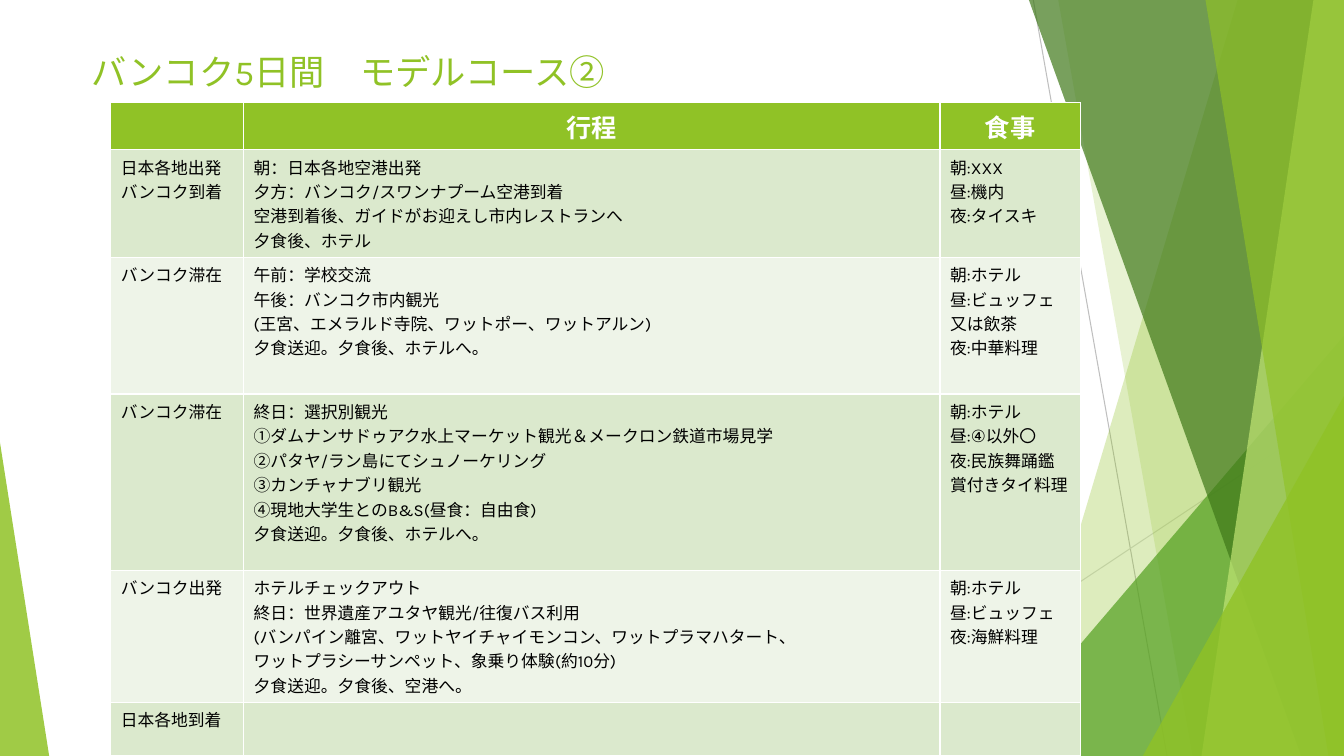
from lxml import etree
from pptx import Presentation
from pptx import util as u
from pptx.dml.color import RGBColor
from pptx.enum import shapes, text
from pptx.oxml import ns

FONT = "Karla"
GREEN = RGBColor(0x90, 0xC2, 0x26)
MID_GREEN = RGBColor(0x54, 0xA0, 0x21)
DARK_GREEN = RGBColor(0x3F, 0x78, 0x19)
LIGHT_GREEN = RGBColor(0xC0, 0xE4, 0x74)
BAND_DARK = RGBColor(0xDB, 0xE9, 0xCD)
BAND_LIGHT = RGBColor(0xEE, 0xF4, 0xE8)
GREY = RGBColor(0xBF, 0xBF, 0xBF)
PALE_GREY = RGBColor(0xD9, 0xD9, 0xD9)
WHITE = RGBColor(0xFF, 0xFF, 0xFF)
BLACK = RGBColor(0x00, 0x00, 0x00)
WIDTH, HEIGHT = 33.87, 19.05


def paint(shape, color, opacity):
    shape.shadow.inherit = False
    shape.line.fill.background()
    shape.fill.solid()
    shape.fill.fore_color.rgb = color
    color_element = shape.fill._xPr.find(".//" + ns.qn("a:srgbClr"))
    etree.SubElement(color_element, ns.qn("a:alpha"), val=str(opacity * 1000))


def style_runs(paragraph, size, color, bold=False):
    for run in paragraph.runs:
        run.font.name = FONT
        run.font.size = u.Pt(size)
        run.font.color.rgb = color
        run.font.bold = bold


presentation = Presentation()
presentation.slide_width = u.Cm(WIDTH)
presentation.slide_height = u.Cm(HEIGHT)
slide = presentation.slides.add_slide(presentation.slide_layouts[6])

# Thin background lines
for x1, y1, x2, y2, color in [
    (26.04, 0, 29.41, HEIGHT, GREY),
    (WIDTH, 10.24, 20.62, HEIGHT, PALE_GREY),
]:
    line = slide.shapes.add_connector(
        shapes.MSO_CONNECTOR.STRAIGHT, u.Cm(x1), u.Cm(y1), u.Cm(x2), u.Cm(y2))
    line.line.color.rgb = color
    line.line.width = u.Pt(0.75)
    etree.SubElement(line._element.spPr, ns.qn("a:effectLst"))

# Facets, back to front: bands by (top x, bottom x) of the left edge,
# triangles by (left, top, width, apex position)
facets = [
    ("band", (31.19, 25.5), GREEN, 30),
    ("band", (26.67, 30.05), GREEN, 20),
    ("triangle", (24.82, 8.46, 9.05, 1), MID_GREEN, 72),
    ("band", (25.93, 32.79), DARK_GREEN, 70),
    ("band", (33.1, 30.28), LIGHT_GREEN, 70),
    ("band", (30.38, 33.48), GREEN, 65),
    ("triangle", (28.8, 9.98, 5.07, 1), GREEN, 80),
    ("triangle", (0, 11.15, 1.24, 0), GREEN, 85),
]
for kind, geometry, color, opacity in facets:
    if kind == "band":
        top_x, bottom_x = geometry
        builder = slide.shapes.build_freeform(u.Cm(top_x), 0)
        corners = [(WIDTH, 0), (WIDTH, HEIGHT), (bottom_x, HEIGHT)]
        builder.add_line_segments([(u.Cm(x), u.Cm(y)) for x, y in corners], close=True)
        facet = builder.convert_to_shape()
    else:
        left, top, width, apex = geometry
        facet = slide.shapes.add_shape(
            shapes.MSO_SHAPE.ISOSCELES_TRIANGLE,
            u.Cm(left), u.Cm(top), u.Cm(width), u.Cm(HEIGHT - top))
        facet.adjustments[0] = apex
    paint(facet, color, opacity)

# Title
title = slide.shapes.add_textbox(u.Cm(2.06), u.Cm(1.04), u.Cm(14.45), u.Cm(1.52))
title.text_frame.word_wrap = True
title.text_frame.vertical_anchor = text.MSO_ANCHOR.MIDDLE
title.text_frame.text = "バンコク5日間\u3000モデルコース②".replace("\u3000", "　")
style_runs(title.text_frame.paragraphs[0], 25.2, GREEN)

# Itinerary table
itinerary = [
    ("", "行程", "食事"),
    ("日本各地出発\nバンコク到着",
     "朝：日本各地空港出発\n夕方：バンコク/スワンナプーム空港到着\n"
     "空港到着後、ガイドがお迎えし市内レストランへ\n夕食後、ホテル",
     "朝:XXX\n昼:機内\n夜:タイスキ"),
    ("バンコク滞在",
     "午前：学校交流\n午後：バンコク市内観光\n"
     "(王宮、エメラルド寺院、ワットポー、ワットアルン)\n夕食送迎。夕食後、ホテルへ。",
     "朝:ホテル\n昼:ビュッフェ\n又は飲茶\n夜:中華料理"),
    ("バンコク滞在",
     "終日：選択別観光\n①ダムナンサドゥアク水上マーケット観光＆メークロン鉄道市場見学\n"
     "②パタヤ/ラン島にてシュノーケリング\n③カンチャナブリ観光\n"
     "④現地大学生とのB&S(昼食：自由食)\n夕食送迎。夕食後、ホテルへ。",
     "朝:ホテル\n昼:④以外〇\n夜:民族舞踊鑑賞付きタイ料理"),
    ("バンコク出発",
     "ホテルチェックアウト\n終日：世界遺産アユタヤ観光/往復バス利用\n"
     "(バンパイン離宮、ワットヤイチャイモンコン、ワットプラマハタート、\n"
     "ワットプラシーサンペット、象乗り体験(約10分)\n夕食送迎。夕食後、空港へ。",
     "朝:ホテル\n昼:ビュッフェ\n夜:海鮮料理"),
    ("日本各地到着", "", ""),
]
column_widths = [3.35, 17.55, 3.53]
row_heights = [1.18, 2.71, 3.45, 4.44, 3.33, 1.35]
table = slide.shapes.add_table(
    len(itinerary), len(column_widths), u.Cm(2.79), u.Cm(2.59),
    u.Cm(sum(column_widths)), u.Cm(sum(row_heights))).table
for column, width in zip(table.columns, column_widths):
    column.width = u.Cm(width)
for row_index, (row, height) in enumerate(zip(table.rows, row_heights)):
    row.height = u.Cm(height)
    is_header = row_index == 0
    band = BAND_DARK if row_index % 2 else BAND_LIGHT
    for cell, wording in zip(row.cells, itinerary[row_index]):
        cell.fill.solid()
        cell.fill.fore_color.rgb = GREEN if is_header else band
        cell.text_frame.text = wording
        for paragraph in cell.text_frame.paragraphs:
            if is_header:
                paragraph.alignment = text.PP_ALIGN.CENTER
                style_runs(paragraph, 18, WHITE, bold=True)
            else:
                style_runs(paragraph, 12, BLACK)

presentation.save("out.pptx")
